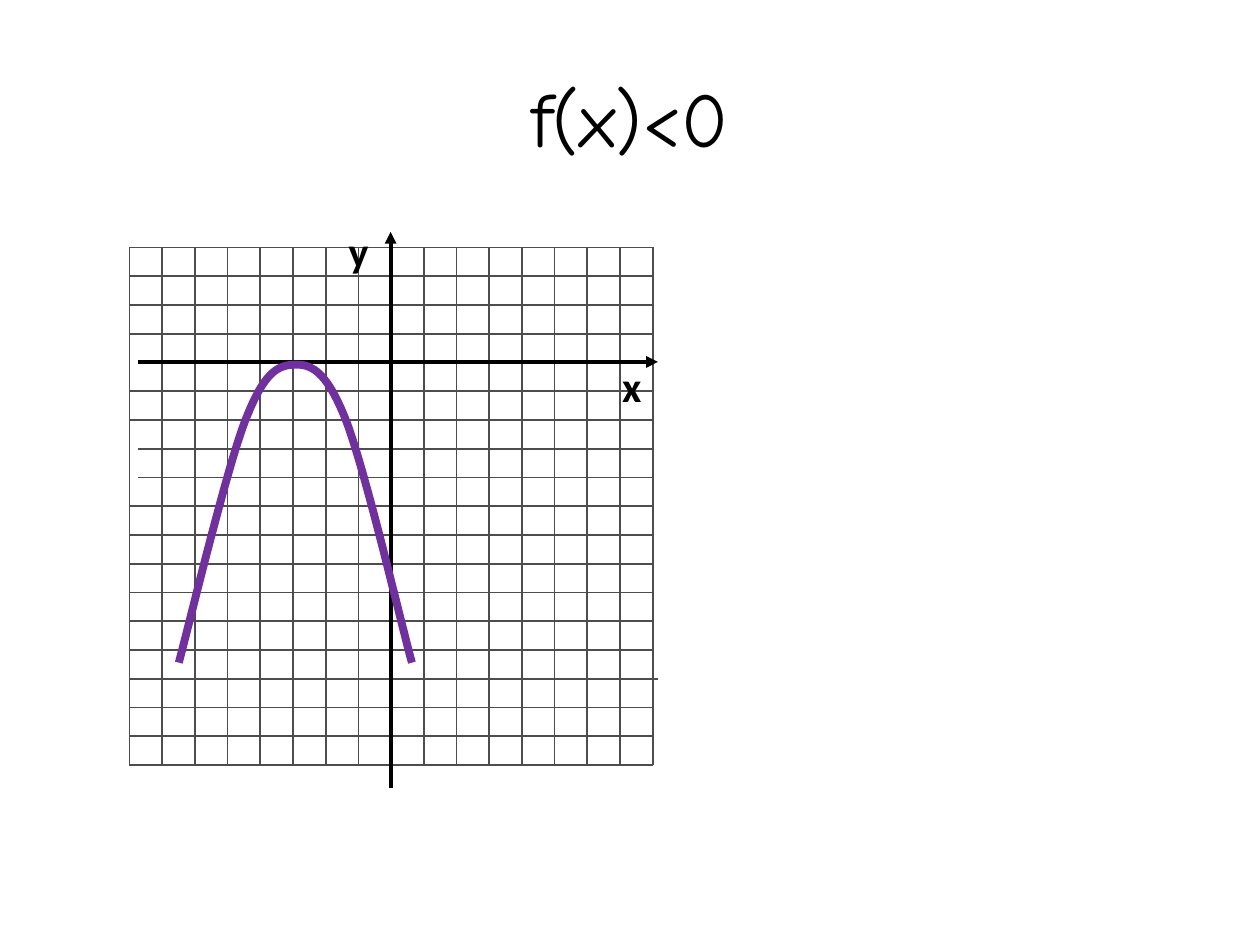
from lxml import etree
from pptx import Presentation
from pptx.dml.color import RGBColor
from pptx.enum import shapes, text
from pptx.oxml import ns
from pptx.util import Pt

COLORS = {"ink": "000000", "grid": "4D4D4D", "curve": "7030A0"}

LEFT, TOP, RIGHT, BOTTOM = 74, 141.4, 373, 437.2
COLUMNS, ROWS = 16, 18
Y_AXIS_COLUMN, X_AXIS_ROW = 8, 4
SHORT_ROWS = (7, 8)
LONG_ROW = 15

# Start point, then two control points and an end point for each segment.
CURVE = [
    (102.2, 378.7),
    (106.6, 362.9), (128.9, 270), (139.7, 241.6),
    (150.5, 213.1), (158.4, 208.8), (168.2, 208.4),
    (177.8, 208.1), (186.5, 211.7), (197.7, 240.2),
    (208.8, 268.6), (229.7, 358.6), (235.4, 378.7),
]


def color(name):
    return RGBColor.from_string(COLORS[name])


def add_text(parent, words, left, top, width, height, *, font, size, bold=False,
             align=text.PP_ALIGN.LEFT, anchor=text.MSO_ANCHOR.TOP, wrap=True):
    box = parent.add_textbox(Pt(left), Pt(top), Pt(width), Pt(height))
    frame = box.text_frame
    frame.word_wrap = wrap
    frame.vertical_anchor = anchor
    para = frame.paragraphs[0]
    para.alignment = align
    span = para.add_run()
    span.text = words
    span.font.name = font
    span.font.size = Pt(size)
    span.font.bold = bold
    span.font.color.rgb = color("ink")


def add_line(parent, x1, y1, x2, y2, line_color, weight):
    line = parent.add_connector(shapes.MSO_CONNECTOR.STRAIGHT,
                                Pt(x1), Pt(y1), Pt(x2), Pt(y2))
    line.line.color.rgb = color(line_color)
    line.line.width = Pt(weight)
    etree.SubElement(line._element.spPr, ns.qn("a:effectLst"))
    return line


def add_axis(parent, x1, y1, x2, y2):
    axis = add_line(parent, x1, y1, x2, y2, "ink", 2.25)
    etree.SubElement(axis.line._get_or_add_ln(), ns.qn("a:tailEnd"), type="triangle")


def add_grid(parent):
    """Draw the grid lines, leaving out those that the axes replace."""
    for row in range(ROWS + 1):
        if row != X_AXIS_ROW:
            y = TOP + row * (BOTTOM - TOP) / ROWS
            start = LEFT + 5 if row in SHORT_ROWS else LEFT
            end = RIGHT + 3 if row == LONG_ROW else RIGHT
            add_line(parent, start, y, end, y, "grid", 1)
    for column in range(COLUMNS + 1):
        if column != Y_AXIS_COLUMN:
            x = LEFT + column * (RIGHT - LEFT) / COLUMNS
            add_line(parent, x, TOP, x, BOTTOM, "grid", 1)


def bezier_points(knots, steps=20):
    """Sample a chain of cubic segments, without its start point."""
    points = []
    for first in range(0, len(knots) - 1, 3):
        segment = knots[first:first + 4]
        for step in range(1, steps + 1):
            t = step / steps
            weights = ((1 - t) ** 3, 3 * t * (1 - t) ** 2, 3 * t ** 2 * (1 - t), t ** 3)
            points.append(tuple(sum(w * knot[axis] for w, knot in zip(weights, segment))
                                for axis in (0, 1)))
    return points


def add_curve(parent, knots):
    start_x, start_y = knots[0]
    builder = parent.build_freeform(Pt(start_x), Pt(start_y))
    builder.add_line_segments([(Pt(x), Pt(y)) for x, y in bezier_points(knots)],
                              close=False)
    curve = builder.convert_to_shape()
    curve.shadow.inherit = False
    curve.fill.background()
    curve.line.color.rgb = color("curve")
    curve.line.width = Pt(4.5)


def main():
    deck = Presentation()
    deck.slide_width, deck.slide_height = Pt(720), Pt(540)
    page = deck.slides.add_slide(deck.slide_layouts[6])

    add_text(page.shapes, "f(x)<0", 36, 21.6, 648, 90, font="Comic Neue", size=44,
             align=text.PP_ALIGN.CENTER, anchor=text.MSO_ANCHOR.MIDDLE)

    plane = page.shapes.add_group_shape().shapes
    add_grid(plane)
    add_axis(plane, 79, 206.8, 376, 206.8)
    add_axis(plane, 223.2, 450, 223.2, 132.5)
    for label, left, top in (("у", 192.2, 125.3), ("х", 348.5, 202.3)):
        add_text(plane, label, left, top, 21.6, 26.6, font="Calibri", size=24,
                 bold=True, wrap=False)

    add_curve(page.shapes, CURVE)
    deck.save("out.pptx")


if __name__ == "__main__":
    main()
